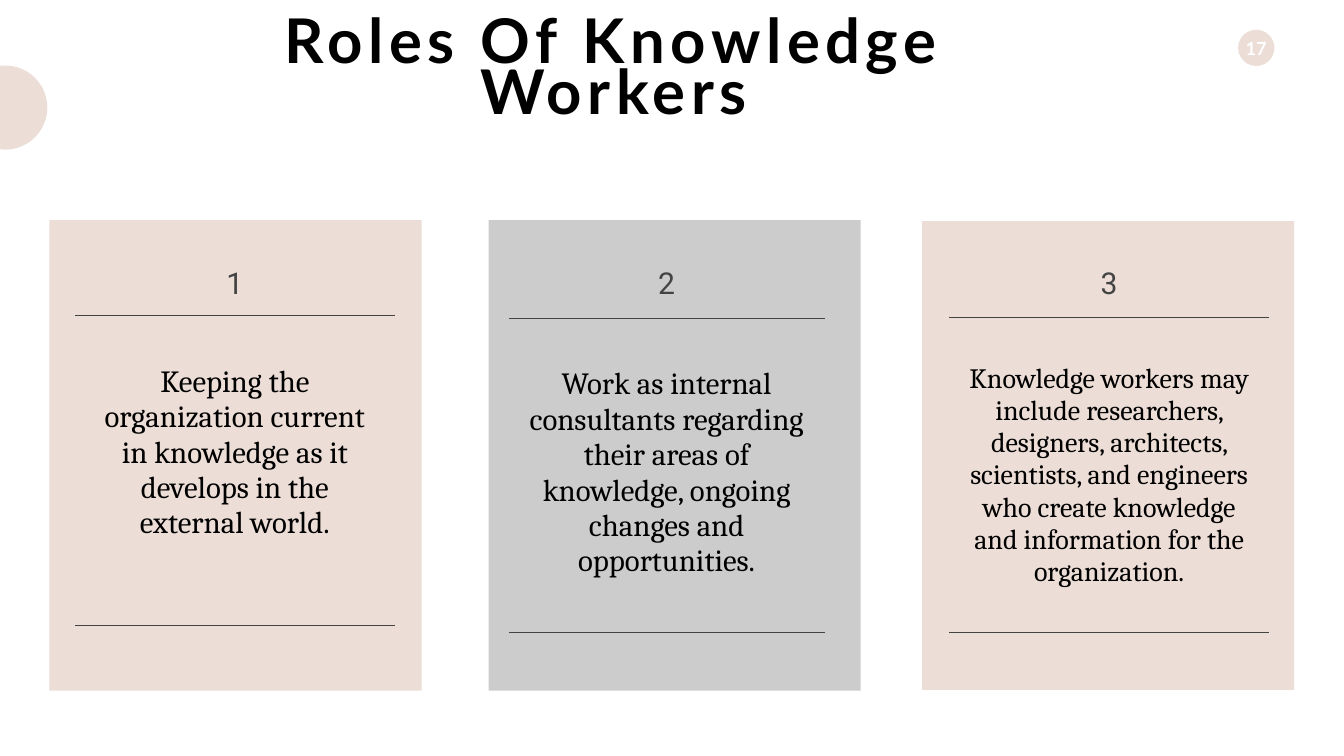
"""Build the slide on the roles of knowledge workers: three numbered cards under a title."""
from dataclasses import dataclass

from lxml import etree
from pptx import Presentation
from pptx.dml.color import RGBColor
from pptx.enum.shapes import MSO_SHAPE
from pptx.enum.text import MSO_ANCHOR, PP_ALIGN
from pptx.oxml.ns import qn
from pptx.util import Pt

OVAL, RECTANGLE = MSO_SHAPE.OVAL, MSO_SHAPE.RECTANGLE
CENTER = PP_ALIGN.CENTER
TOP, MIDDLE = MSO_ANCHOR.TOP, MSO_ANCHOR.MIDDLE


@dataclass(frozen=True)
class Theme:
    blush: str = "ECDDD6"
    gray: str = "CCCCCC"
    rule: str = "434343"
    black: str = "000000"
    white: str = "FFFFFF"
    heading_font: str = "Lato"
    number_font: str = "Roboto"
    body_font: str = "Cambria"
    title_size: float = 88
    number_size: float = 43
    page_number_size: float = 26
    rule_width: float = 0.75
    inset: float = 19.44
    plain_table: str = "{2D5ABB26-0587-4C30-8999-92F81FD0307C}"


@dataclass(frozen=True)
class Card:
    number: str
    text: str
    fill: str
    left: float
    table_left: float
    table_width: float
    rows: tuple[float, float, float]
    size: float = 44
    top: float = 314.6
    height: float = 672


THEME = Theme()
TABLE_TOP = 361.4
CARD_WIDTH = 531.4
CARDS = (
    Card("1", "Keeping the organization current in knowledge as it develops in the external world.",
         THEME.blush, 70.6, 107.3, 456.5, (89.3, 442, 153.4)),
    Card("2", "Work as internal consultants regarding their areas of knowledge, "
         "ongoing changes and opportunities.",
         THEME.gray, 697.7, 726.5, 451.4, (92.9, 448.6, 153.4)),
    Card("3", "Knowledge workers may include researchers, designers, architects, scientists, "
         "and engineers who create knowledge and information for the organization.",
         THEME.blush, 1316.9, 1355.8, 456.5, (92.2, 450, 153.4), 40, 316, 669.6),
)


def write(frame, text: str, *, font: str, size: float, color: str, bold: bool = False,
          tracking: float = 0, line_spacing: float = 0) -> None:
    para = frame.paragraphs[0]
    para.alignment = CENTER
    if line_spacing:
        para.line_spacing = Pt(line_spacing)
    span = para.add_run()
    span.text = text
    span.font.name = font
    span.font.size = Pt(size)
    span.font.bold = bold
    span.font.color.rgb = RGBColor.from_string(color)
    if tracking:
        span._r.get_or_add_rPr().set("spc", str(round(tracking * 100)))


def draw_shape(page, kind, left: float, top: float, width: float, height: float, fill: str):
    shape = page.shapes.add_shape(kind, Pt(left), Pt(top), Pt(width), Pt(height))
    shape.shadow.inherit = False
    shape.fill.solid()
    shape.fill.fore_color.rgb = RGBColor.from_string(fill)
    shape.line.fill.background()
    return shape


def add_rule(cell, side: str) -> None:
    properties = cell._tc.get_or_add_tcPr()
    line = etree.SubElement(properties, qn(f"a:{side}"), w=str(Pt(THEME.rule_width)))
    fill = etree.SubElement(line, qn("a:solidFill"))
    etree.SubElement(fill, qn("a:srgbClr"), val=THEME.rule)


def draw_table(page, card: Card) -> None:
    frame = page.shapes.add_table(len(card.rows), 1, Pt(card.table_left), Pt(TABLE_TOP),
                                  Pt(card.table_width), Pt(sum(card.rows)))
    table = frame.table
    table.first_row = table.horz_banding = False
    table._tbl.tblPr.find(qn("a:tableStyleId")).text = THEME.plain_table
    last = len(card.rows) - 1
    for index, height in enumerate(card.rows):
        table.rows[index].height = Pt(height)
        cell = table.cell(index, 0)
        cell.margin_left = cell.margin_right = Pt(THEME.inset)
        cell.margin_top = cell.margin_bottom = Pt(THEME.inset)
        cell.vertical_anchor = TOP
        if index > 0:
            add_rule(cell, "lnT")
        if index < last:
            add_rule(cell, "lnB")
        cell.fill.background()
    number, body = table.cell(0, 0), table.cell(1, 0)
    body.margin_top = Pt(THEME.inset + 1.15 * card.size)
    write(number.text_frame, card.number, font=THEME.number_font,
          size=THEME.number_size, color=THEME.rule)
    write(body.text_frame, card.text, font=THEME.body_font, size=card.size, color=THEME.black)


def draw_page_number(page, text: str) -> None:
    badge = draw_shape(page, OVAL, 1768.3, 42.5, 51.8, 51.8, THEME.blush)
    frame = badge.text_frame
    frame.margin_left = frame.margin_right = frame.margin_top = frame.margin_bottom = 0
    frame.word_wrap = False
    frame.vertical_anchor = MIDDLE
    write(frame, text, font=THEME.heading_font, size=THEME.page_number_size,
          color=THEME.white, bold=True)


def draw_title(page, text: str) -> None:
    box = page.shapes.add_textbox(Pt(272.9), Pt(33.1), Pt(1207.4), Pt(157.7))
    box.text_frame.word_wrap = True
    write(box.text_frame, text, font=THEME.heading_font, size=THEME.title_size,
          color=THEME.black, bold=True, tracking=8, line_spacing=72)


def main() -> None:
    deck = Presentation()
    deck.slide_width, deck.slide_height = Pt(1919.52), Pt(1080)
    page = deck.slides.add_slide(deck.slide_layouts[6])
    draw_page_number(page, "17")
    draw_shape(page, OVAL, -52.6, 93.6, 120.2, 120.2, THEME.blush)
    for card in CARDS:
        draw_shape(page, RECTANGLE, card.left, card.top, CARD_WIDTH, card.height, card.fill)
    for card in CARDS:
        draw_table(page, card)
    draw_title(page, "Roles Of Knowledge Workers")
    deck.save("out.pptx")


if __name__ == "__main__":
    main()
